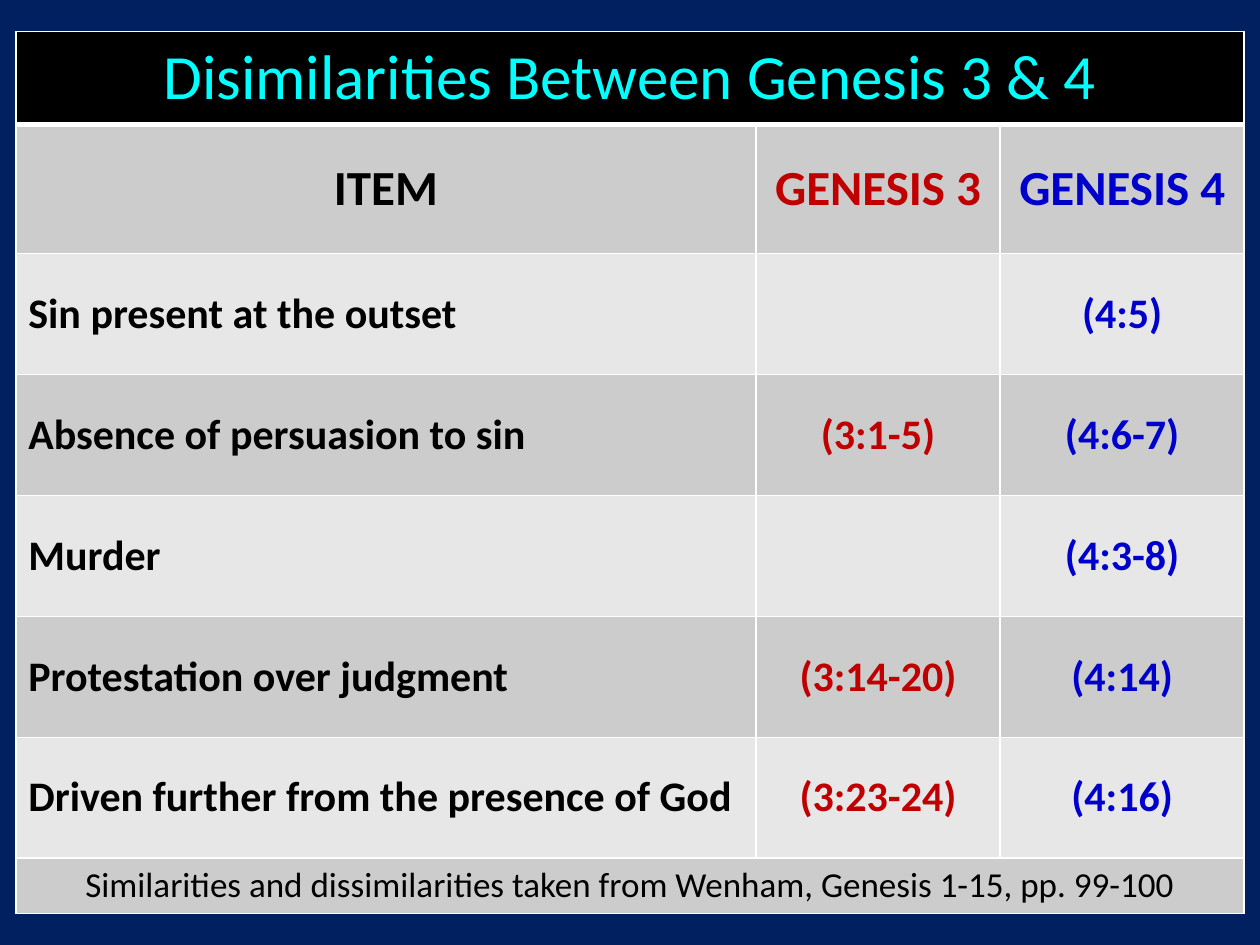
from lxml import etree
from pptx import Presentation
from pptx.dml.color import RGBColor
from pptx.enum.text import MSO_ANCHOR, PP_ALIGN
from pptx.oxml.ns import qn
from pptx.util import Pt

LEFT, CENTER = PP_ALIGN.LEFT, PP_ALIGN.CENTER
MIDDLE = MSO_ANCHOR.MIDDLE

NAVY = RGBColor(0x00, 0x20, 0x60)
BLACK = RGBColor(0x00, 0x00, 0x00)
WHITE = RGBColor(0xFF, 0xFF, 0xFF)
CYAN = RGBColor(0x00, 0xFF, 0xFF)
RED = RGBColor(0xC0, 0x00, 0x00)
BLUE = RGBColor(0x00, 0x00, 0xCC)
DARK_BAND = RGBColor(0xCC, 0xCC, 0xCC)
LIGHT_BAND = RGBColor(0xE7, 0xE7, 0xE7)

FONT = "Calibri"
TITLE = "Disimilarities Between Genesis 3 & 4"
CREDIT = "Similarities and dissimilarities taken from Wenham, Genesis 1-15, pp. 99-100"
HEADINGS = ("ITEM", "GENESIS 3", "GENESIS 4")
ITEMS = [
    ("Sin present at the outset", "", "(4:5)"),
    ("Absence of persuasion to sin", "(3:1-5)", "(4:6-7)"),
    ("Murder", "", "(4:3-8)"),
    ("Protestation over judgment", "(3:14-20)", "(4:14)"),
    ("Driven further from the presence of God", "(3:23-24)", "(4:16)"),
]
COLUMN_COLORS = (BLACK, RED, BLUE)
COLUMN_WIDTHS = (423, 139.5, 139.5)
ROW_HEIGHTS = [53.2, 73.8] + [69.1] * len(ITEMS) + [31.4]


def write_text(cell, text, size=24, color=BLACK, bold=True, align=CENTER):
    cell.vertical_anchor = MIDDLE
    p = cell.text_frame.paragraphs[0]
    p.alignment = align
    if text:
        r = p.add_run()
        r.text = text
        r.font.name = FONT
        r.font.size = Pt(size)
        r.font.bold = bold
        r.font.color.rgb = color


def style_cell(cell, fill, bottom=1):
    tc_pr = cell._tc.get_or_add_tcPr()
    for side, width in (("L", 1), ("R", 1), ("T", 1), ("B", bottom)):
        ln = etree.SubElement(tc_pr, qn(f"a:ln{side}"), w=str(Pt(width)))
        solid = etree.SubElement(ln, qn("a:solidFill"))
        etree.SubElement(solid, qn("a:srgbClr"), val=str(WHITE))
    cell.fill.solid()
    cell.fill.fore_color.rgb = fill


def add_grid(s):
    frame = s.shapes.add_table(
        len(ROW_HEIGHTS), len(COLUMN_WIDTHS),
        Pt(9), Pt(18), Pt(sum(COLUMN_WIDTHS)), Pt(sum(ROW_HEIGHTS)))
    table = frame.table
    for column, width in zip(table.columns, COLUMN_WIDTHS):
        column.width = Pt(width)
    for row, height in zip(table.rows, ROW_HEIGHTS):
        row.height = Pt(height)
    return table


def fill_banner(table, row, text, fill, bottom=1, **text_format):
    cells = list(table.rows[row].cells)
    for cell in cells:
        style_cell(cell, fill, bottom)
    cells[0].merge(cells[-1])
    write_text(cells[0], text, bold=False, **text_format)


def fill_row(table, row, texts, size=24, item_align=LEFT):
    band = DARK_BAND if row % 2 else LIGHT_BAND
    aligns = (item_align, CENTER, CENTER)
    for cell, text, color, align in zip(
            table.rows[row].cells, texts, COLUMN_COLORS, aligns):
        style_cell(cell, band)
        write_text(cell, text, size=size, color=color, align=align)


def main():
    prs = Presentation()
    prs.slide_width, prs.slide_height = Pt(720), Pt(540)
    s = prs.slides.add_slide(prs.slide_layouts[6])
    s.background.fill.solid()
    s.background.fill.fore_color.rgb = NAVY

    table = add_grid(s)
    fill_banner(table, 0, TITLE, BLACK, bottom=3, size=36, color=CYAN)
    fill_row(table, 1, HEADINGS, size=28, item_align=CENTER)
    for row, texts in enumerate(ITEMS, start=2):
        fill_row(table, row, texts)
    fill_banner(table, len(ROW_HEIGHTS) - 1, CREDIT, DARK_BAND, size=20)

    prs.save("out.pptx")


if __name__ == "__main__":
    main()
